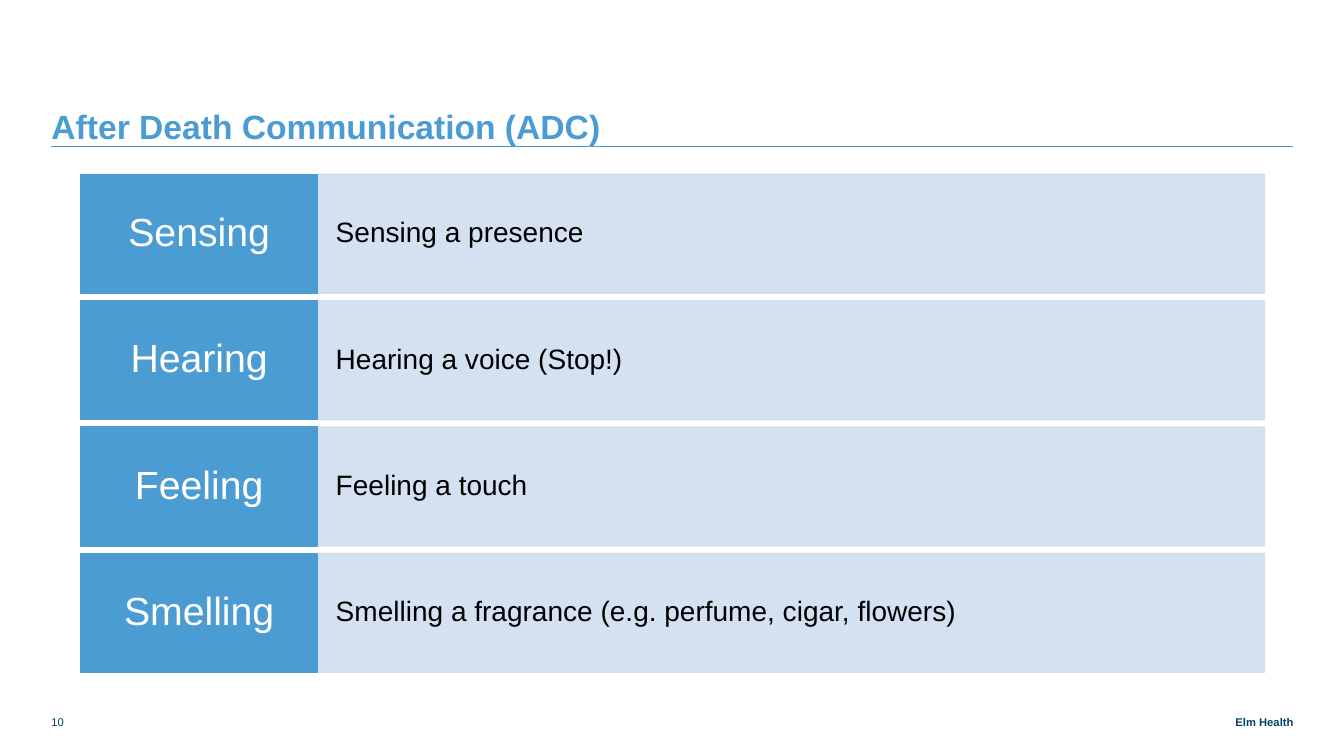
import pptx
import pptx.util
from lxml import etree
from pptx.dml.color import RGBColor
from pptx.enum.shapes import MSO_CONNECTOR, MSO_SHAPE
from pptx.enum.text import MSO_ANCHOR, PP_ALIGN
from pptx.oxml.ns import qn
from pptx.util import Inches, Pt

# Content
TITLE = "After Death Communication (ADC)"
ROWS = [
    ("Sensing", "Sensing a presence"),
    ("Hearing", "Hearing a voice (Stop!)"),
    ("Feeling", "Feeling a touch"),
    ("Smelling", "Smelling a fragrance (e.g. perfume, cigar, flowers)"),
]
PAGE = "10"
OWNER = "Elm Health"

# Look
FONT = "Arial"
BLUE = RGBColor(0x4B, 0x9C, 0xD3)
PALE = RGBColor(0xD0, 0xDE, 0xEF)
NAVY = RGBColor(0x00, 0x41, 0x63)
WHITE = RGBColor(0xFF, 0xFF, 0xFF)
BLACK = RGBColor(0x00, 0x00, 0x00)

# Grid, in inches
LEFT, TOP = 0.8, 1.73
HEAD_W, BODY_W = 2.35, 9.39
ROW_H, STEP = 1.18, 1.2533
EDGE, FULL_W = 0.51, 12.31

deck = pptx.Presentation()
deck.slide_width, deck.slide_height = Inches(13.33), Inches(7.5)
slide = deck.slides.add_slide(deck.slide_layouts[6])


def write(shape, text, size, color, align, anchor, insets, bold=False, space=None):
    frame = shape.text_frame
    frame.text = text
    frame.word_wrap = True
    frame.vertical_anchor = anchor
    (frame.margin_left, frame.margin_top,
     frame.margin_right, frame.margin_bottom) = map(Inches, insets)
    para = frame.paragraphs[0]
    para.alignment = align
    para.line_spacing = space
    font = para.runs[0].font
    font.name, font.size, font.bold = FONT, Pt(size), bold
    font.color.rgb = color


def label(box, *style, **more):
    shape = slide.shapes.add_textbox(*map(Inches, box))
    write(shape, *style, **more)


def block(box, color, alpha=None):
    shape = slide.shapes.add_shape(MSO_SHAPE.RECTANGLE, *map(Inches, box))
    shape.shadow.inherit = False
    shape.fill.solid()
    shape.fill.fore_color.rgb = color
    shape.line.color.rgb = color
    shape.line.width = Pt(1)
    if alpha:
        for tint in shape.fill._xPr.iter(qn("a:srgbClr")):
            etree.SubElement(tint, qn("a:alpha")).set("val", str(alpha * 1000))
    return shape


# Title and rule
label((EDGE, 0.38, FULL_W, 0.79), TITLE, 24, BLUE, PP_ALIGN.LEFT,
      MSO_ANCHOR.BOTTOM, (0, 0.95, 2.12, 0), bold=True, space=Pt(28))
rule = slide.shapes.add_connector(
    MSO_CONNECTOR.STRAIGHT, *map(Inches, (EDGE, 1.45, EDGE + FULL_W, 1.45)))
rule.line.color.rgb = BLUE
rule.line.width = Pt(0.5)
etree.SubElement(rule.line._get_or_add_ln().getparent(), qn("a:effectLst"))

# Rows: a pale body beside a blue head
for i, (head, body) in enumerate(ROWS):
    y = TOP + i * STEP
    write(block((LEFT + HEAD_W, y, BODY_W, ROW_H), PALE, 90), body, 20, BLACK,
          PP_ALIGN.LEFT, MSO_ANCHOR.MIDDLE, (0.18, 0.3, 0.18, 0.3), space=0.9)
    write(block((LEFT, y, HEAD_W, ROW_H), BLUE), head, 28, WHITE,
          PP_ALIGN.CENTER, MSO_ANCHOR.MIDDLE, (0.12,) * 4, space=0.9)

# Footer
label((EDGE, 7, 0.46, 0.23), PAGE, 8, NAVY, PP_ALIGN.LEFT,
      MSO_ANCHOR.BOTTOM, (0,) * 4)
label((11.19, 7, 1.64, 0.23), OWNER, 8, NAVY, PP_ALIGN.RIGHT,
      MSO_ANCHOR.BOTTOM, (0,) * 4, bold=True)

deck.save("out.pptx")
